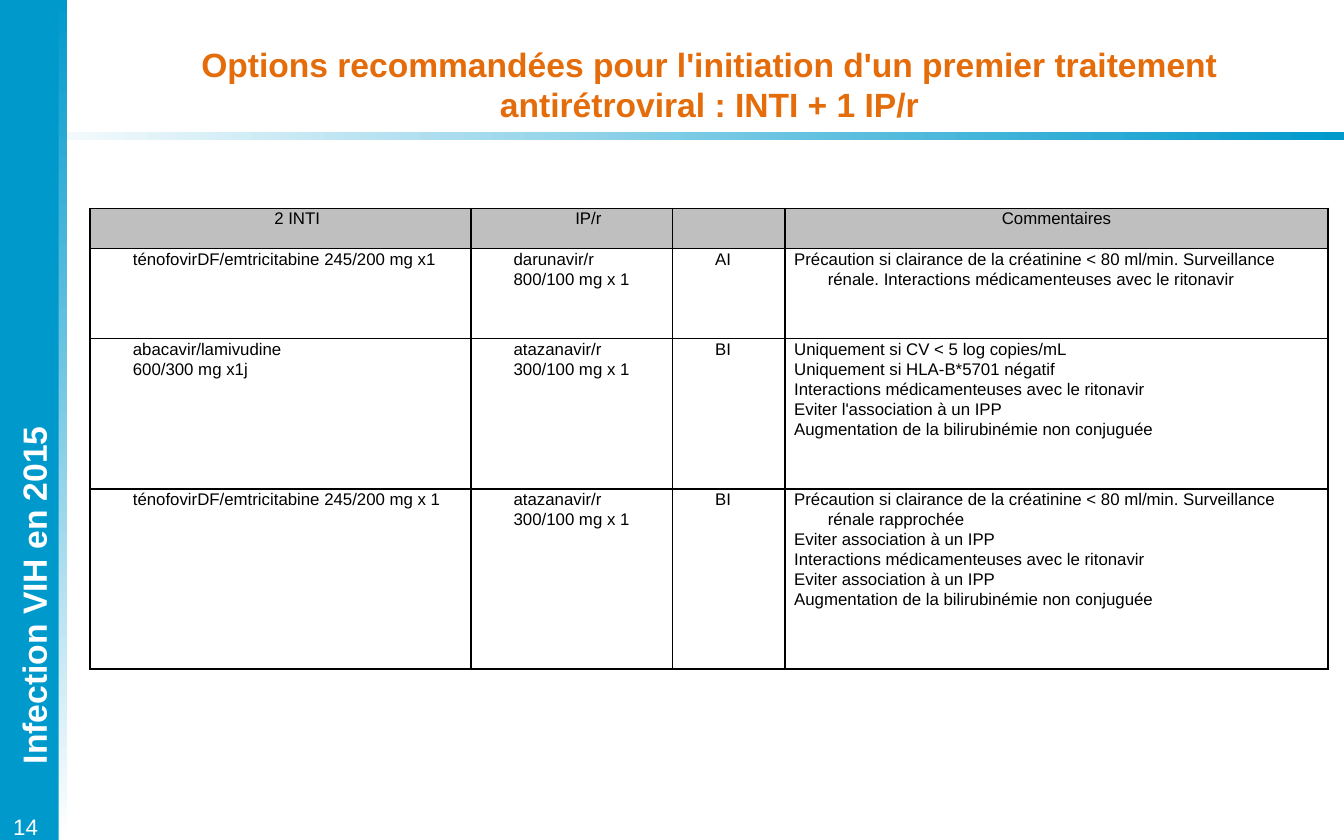
from dataclasses import dataclass
from typing import Any

from lxml.etree import SubElement
from pptx import Presentation
from pptx.dml.color import RGBColor
from pptx.enum.shapes import MSO_SHAPE as Preset
from pptx.enum.text import MSO_ANCHOR as Anchor, PP_ALIGN as Align
from pptx.oxml.ns import qn
from pptx.util import Pt


def color(value):
    return RGBColor.from_string(value)


@dataclass
class SlideBuilder:
    """Draws styled elements on the current slide."""

    slide: Any
    font: str = "Arial"
    blue: str = "0099CC"
    white: str = "FFFFFF"
    orange: str = "E46C0A"
    black: str = "000000"
    gray: str = "BFBFBF"

    def bar(self, left, top, width, height, colors, angle=0):
        shape = self.slide.shapes.add_shape(
            Preset.RECTANGLE, Pt(left), Pt(top), Pt(width), Pt(height))
        shape.shadow.inherit = False
        shape.line.fill.background()
        if len(colors) == 1:
            shape.fill.solid()
            shape.fill.fore_color.rgb = color(colors[0])
            return
        shape.fill.gradient()
        shape.fill.gradient_angle = angle
        for stop, value in zip(shape.fill.gradient_stops, colors):
            stop.color.rgb = color(value)

    def add_words(self, paragraph, text, size, value, bold=False, align=Align.LEFT):
        paragraph.alignment = align
        run = paragraph.add_run()
        run.text = text
        style = {"name": self.font, "size": Pt(size), "bold": bold}
        for name, setting in style.items():
            setattr(run.font, name, setting)
        run.font.color.rgb = color(value)

    def text(self, left, top, width, height, text, size, value,
             rotation=0, wrap=True, anchor=Anchor.TOP, **style):
        shape = self.slide.shapes.add_textbox(
            Pt(left), Pt(top), Pt(width), Pt(height))
        shape.rotation = rotation
        frame = shape.text_frame
        frame.word_wrap = wrap
        frame.vertical_anchor = anchor
        self.add_words(frame.paragraphs[0], text, size, value, **style)

    def border(self, cell):
        properties = cell._tc.get_or_add_tcPr()
        for side in ("lnL", "lnR", "lnT", "lnB"):
            line = SubElement(properties, qn(f"a:{side}"), w=str(Pt(1)))
            fill = SubElement(line, qn("a:solidFill"))
            SubElement(fill, qn("a:srgbClr"), val=self.black)

    def cell(self, cell, text, margin, align, fill=None):
        layout = {"margin_left": Pt(5), "margin_right": Pt(5),
                  "margin_top": 0, "margin_bottom": 0}
        for name, setting in layout.items():
            setattr(cell, name, setting)
        self.border(cell)
        if fill:
            cell.fill.solid()
            cell.fill.fore_color.rgb = color(fill)
        else:
            cell.fill.background()
        frame = cell.text_frame
        for index, line in enumerate(text.split("\n")):
            paragraph = frame.add_paragraph() if index else frame.paragraphs[0]
            paragraph.line_spacing = 1.07
            self.add_words(paragraph, line, 9, self.black, align=align)
            properties = paragraph._p.get_or_add_pPr()
            properties.set("marL", str(Pt(margin)))
            properties.set("indent", str(Pt(-18)))

    def table(self, left, top, widths, heights, rows):
        table = self.slide.shapes.add_table(
            len(rows), len(widths), Pt(left), Pt(top),
            Pt(sum(widths)), Pt(sum(heights))).table
        table.first_row = table.horz_banding = False
        for column, width in zip(table.columns, widths):
            column.width = Pt(width)
        for row, height in zip(table.rows, heights):
            row.height = Pt(height)
        last = len(widths) - 1
        for r, texts in enumerate(rows):
            for c, text in enumerate(texts):
                body_align = Align.LEFT if c == last else Align.JUSTIFY
                self.cell(table.cell(r, c), text,
                          margin=18 if c == last else 36,
                          align=body_align if r else Align.CENTER,
                          fill=None if r else self.gray)


def main():
    presentation = Presentation()
    presentation.slide_width, presentation.slide_height = Pt(720), Pt(450)
    builder = SlideBuilder(
        presentation.slides.add_slide(presentation.slide_layouts[6]))
    blue, white = builder.blue, builder.white

    builder.bar(0, 70.5, 720, 4.8, [white, blue])
    builder.bar(4.3, 0, 31.7, 450, [blue, white], angle=270)
    builder.bar(0, 0, 31.5, 450, [blue])
    builder.text(-80.6, 304.5, 197.3, 28.8, "Infection VIH en 2015", 18, white,
                 rotation=270, wrap=False, bold=True, align=Align.CENTER)
    builder.text(0, 432, 40.3, 21.6, "14", 12, white)
    builder.text(54, 19.6, 652.3, 51.1,
                 "Options recommandées pour l'initiation d'un premier "
                 "traitement antirétroviral : INTI + 1 IP/r",
                 18, builder.orange, anchor=Anchor.MIDDLE, bold=True,
                 align=Align.CENTER)

    clearance = ("Précaution si clairance de la créatinine < 80 ml/min. "
                 "Surveillance rénale")
    ritonavir = "Interactions médicamenteuses avec le ritonavir"
    bilirubin = "Augmentation de la bilirubinémie non conjuguée"
    ppi = "Eviter association à un IPP"
    atazanavir = "atazanavir/r\n300/100 mg x 1"
    rows = [
        ["2 INTI", "IP/r", "", "Commentaires"],
        ["ténofovirDF/emtricitabine 245/200 mg x1",
         "darunavir/r\n800/100 mg x 1", "AI", f"{clearance}. {ritonavir}"],
        ["abacavir/lamivudine\n600/300 mg x1j", atazanavir, "BI",
         "\n".join(["Uniquement si CV < 5 log copies/mL",
                    "Uniquement si HLA-B*5701 négatif", ritonavir,
                    "Eviter l'association à un IPP", bilirubin])],
        ["ténofovirDF/emtricitabine 245/200 mg x 1", atazanavir, "BI",
         "\n".join([f"{clearance} rapprochée", ppi, ritonavir, ppi, bilirubin])],
    ]
    heights = [16.08 * lines for lines in (1, 3, 5, 6)]
    builder.table(48.2, 111.6, [204, 108, 60.3, 291], heights, rows)
    presentation.save("out.pptx")


if __name__ == "__main__":
    main()
